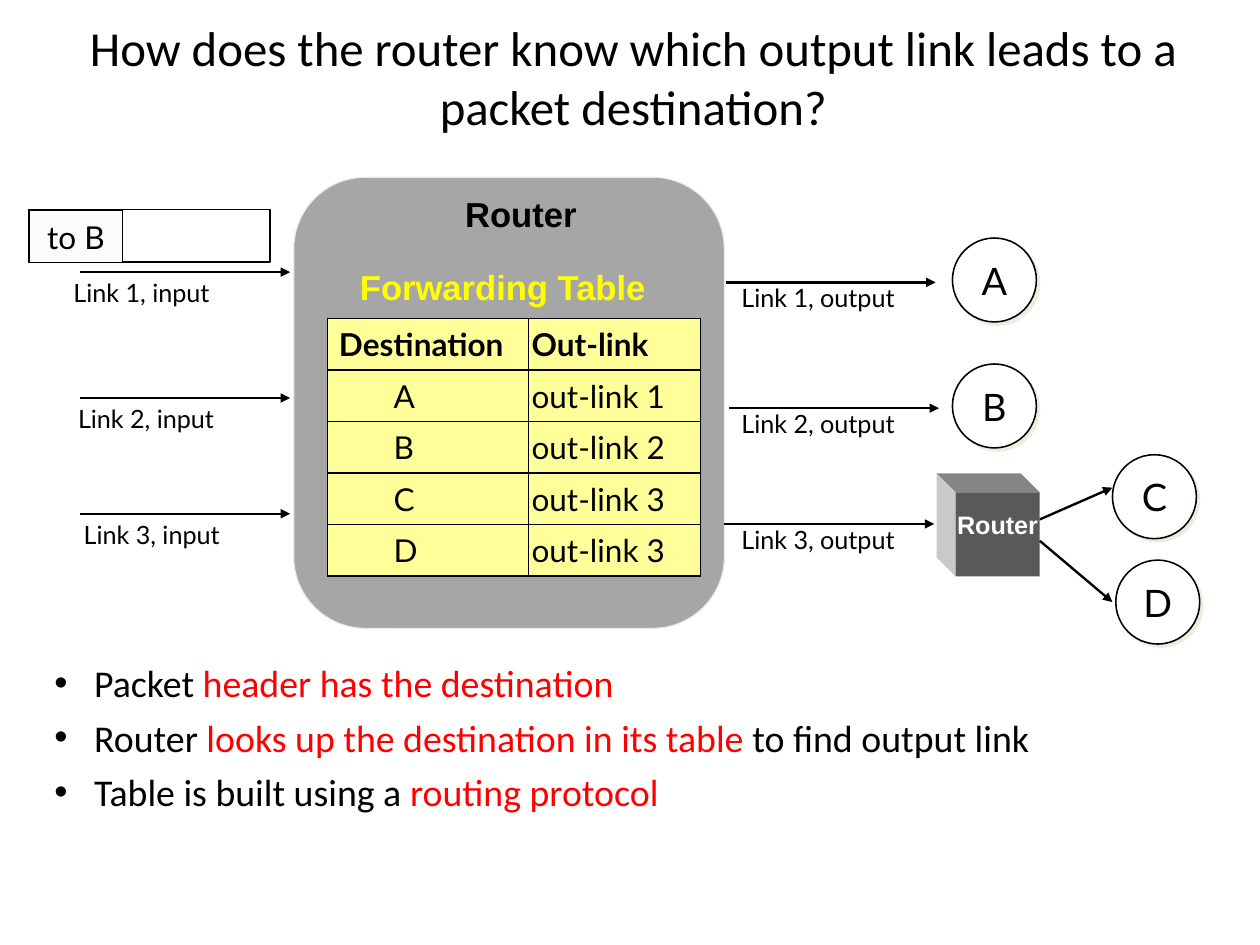
from lxml import etree
from pptx import Presentation
from pptx.dml.color import RGBColor
from pptx.enum import shapes, text
from pptx.oxml import parse_xml
from pptx.oxml.ns import nsdecls, qn
from pptx.util import Pt

BLACK = RGBColor(0, 0, 0)
WHITE = RGBColor(255, 255, 255)
RED = RGBColor(255, 0, 0)
YELLOW = RGBColor(255, 255, 0)
PALE_YELLOW = RGBColor(0xFF, 0xFF, 0x99)
CREAM = RGBColor(0xFC, 0xFB, 0xF9)
BEIGE = RGBColor(0xEE, 0xEC, 0xE1)
GREY = RGBColor(0xA6, 0xA6, 0xA6)
CUBE_FRONT = RGBColor(0x59, 0x59, 0x59)
CUBE_TOP = RGBColor(0x85, 0x85, 0x85)
CUBE_SIDE = RGBColor(0xC9, 0xC9, 0xC9)

TITLE = "How does the router know which output link leads to a packet destination?"
POINTS = [
    [("Packet ", BLACK), ("header has the destination", RED)],
    [("Router ", BLACK), ("looks up the destination in its table ", RED),
     ("to find output link", BLACK)],
    [("Table is built using a ", BLACK), ("routing protocol", RED)],
]
FORWARDING = [
    ("Destination", "Out-link"),
    ("A", "out-link 1"),
    ("B", "out-link 2"),
    ("C", "out-link 3"),
    ("D", "out-link 3"),
]
# link number, arrow height, left of input label, start of output arrow
LINKS = [(1, 172.8, 39.6, 460.8), (2, 252.7, 42.5, 463), (3, 326.2, 46.1, 460)]
INPUT_START, LINK_LENGTH = 51, 133.2
OUTPUT_DROP = 6.5
# name and centre of each destination
NODES = [("A", 631.4, 177.8), ("B", 631.4, 257.8), ("C", 733, 315.4), ("D", 735.1, 382.3)]
NODE_SIZE = 53.3
CUBE_X, CUBE_Y, CUBE_SIZE, CUBE_DEPTH = 606.7, 312.6, 53.4, 12
CUBE_ARROWS = [((660.2, 329.8), (706.3, 309.6)), ((660.2, 343.4), (706.3, 382.3))]
TABLE_X, TABLE_Y, COLUMNS, ROW = 208, 202.3, (127.5, 109.5), 32.7

prs = Presentation()
prs.slide_width, prs.slide_height = Pt(800), Pt(600)
s = prs.slides.add_slide(prs.slide_layouts[6])


def write(tf, paragraphs, size=16, font="Lato", color=BLACK, bold=False,
          align=text.PP_ALIGN.LEFT, anchor=text.MSO_ANCHOR.TOP, wrap=True):
    """Fill a text frame; each paragraph is a string or a list of (text, colour)."""
    tf.word_wrap, tf.vertical_anchor = wrap, anchor
    if isinstance(paragraphs, str):
        paragraphs = [paragraphs]
    for i, runs in enumerate(paragraphs):
        p = tf.paragraphs[0] if i == 0 else tf.add_paragraph()
        p.alignment = align
        for words, tint in [(runs, color)] if isinstance(runs, str) else runs:
            r = p.add_run()
            r.text = words
            r.font.size, r.font.name, r.font.bold = Pt(size), font, bold
            r.font.color.rgb = tint
    return tf


def text_box(x, y, w, h, paragraphs, **fmt):
    return write(s.shapes.add_textbox(Pt(x), Pt(y), Pt(w), Pt(h)).text_frame, paragraphs, **fmt)


def paint(sp, fill, line=None, width=1):
    sp.shadow.inherit = False
    sp.fill.solid()
    sp.fill.fore_color.rgb = fill
    if line is None:
        sp.line.fill.background()
    else:
        sp.line.color.rgb, sp.line.width = line, Pt(width)
    return sp


def shape(kind, x, y, w, h, fill, line=None, width=1):
    return paint(s.shapes.add_shape(kind, Pt(x), Pt(y), Pt(w), Pt(h)), fill, line, width)


def polygon(points, fill):
    corners = [(Pt(x), Pt(y)) for x, y in points]
    builder = s.shapes.build_freeform(*corners[0])
    builder.add_line_segments(corners[1:], close=True)
    paint(builder.convert_to_shape(), fill)


def arrow(start, end):
    c = s.shapes.add_connector(shapes.MSO_CONNECTOR.STRAIGHT, *map(Pt, start + end))
    c.line.color.rgb, c.line.width = BLACK, Pt(1.5)
    etree.SubElement(c.line._get_or_add_ln(), qn("a:tailEnd"), type="triangle")
    etree.SubElement(c._element.spPr, qn("a:effectLst"))


def border(cell):
    for side in ("lnL", "lnR", "lnT", "lnB"):
        cell._tc.get_or_add_tcPr().append(parse_xml(
            f'<a:{side} {nsdecls("a")} w="12700"><a:solidFill>'
            f'<a:srgbClr val="{BLACK}"/></a:solidFill></a:{side}>'))


def node(name, cx, cy):
    sp = shape(shapes.MSO_SHAPE.OVAL, cx - NODE_SIZE / 2, cy - NODE_SIZE / 2,
               NODE_SIZE, NODE_SIZE, WHITE, BLACK)
    sp._element.spPr.find(qn("a:effectLst")).append(parse_xml(
        f'<a:outerShdw {nsdecls("a")} dist="35560" dir="2700000">'
        f'<a:srgbClr val="{BEIGE}"/></a:outerShdw>'))
    write(sp.text_frame, name, size=24, **CENTRED)


def forwarding_table():
    t = s.shapes.add_table(len(FORWARDING), 2, Pt(TABLE_X), Pt(TABLE_Y),
                           Pt(sum(COLUMNS)), Pt(ROW * len(FORWARDING))).table
    t.first_row = t.horz_banding = False
    for column, width in zip(t.columns, COLUMNS):
        column.width = Pt(width)
    for i, row in enumerate(FORWARDING):
        t.rows[i].height = Pt(ROW)
        for j, words in enumerate(row):
            cell = t.cell(i, j)
            border(cell)
            cell.fill.solid()
            cell.fill.fore_color.rgb = PALE_YELLOW
            cell.margin_left = Pt(2 if j else 7.2 if i == 0 else 42)
            cell.margin_right = 0
            cell.vertical_anchor = text.MSO_ANCHOR.MIDDLE
            write(cell.text_frame, words, size=20, bold=i == 0)


CENTRED = dict(align=text.PP_ALIGN.CENTER, anchor=text.MSO_ANCHOR.MIDDLE, wrap=False)
HEADING = dict(size=22, font="Arial", bold=True, align=text.PP_ALIGN.CENTER)

text_box(18, -1.5, 768, 100, TITLE, size=31, font="Calibri",
         align=text.PP_ALIGN.CENTER, anchor=text.MSO_ANCHOR.MIDDLE)

shape(shapes.MSO_SHAPE.ROUNDED_RECTANGLE, 186.5, 112.5, 273.5, 286.5, GREY, BEIGE, 0.75)
text_box(213, 118.8, 235.5, 34.5, "Router", **HEADING)
text_box(201.5, 165, 235.5, 34.5, "Forwarding Table", color=YELLOW, **HEADING)
forwarding_table()

for number, y, label_x, output_x in LINKS:
    arrow((INPUT_START, y), (INPUT_START + LINK_LENGTH, y))
    arrow((output_x, y + OUTPUT_DROP), (output_x + LINK_LENGTH, y + OUTPUT_DROP))
    text_box(label_x, y, 102, 26.6, f"Link {number}, input", wrap=False)
    text_box(463.7, y + 2.9, 114, 26.6, f"Link {number}, output", wrap=False)

shape(shapes.MSO_SHAPE.RECTANGLE, 18, 133, 153.5, 33.3, WHITE, BLACK)
header = shape(shapes.MSO_SHAPE.RECTANGLE, 18.7, 133.5, 59, 33.3, CREAM, BLACK)
write(header.text_frame, "to B", size=20, **CENTRED)

left, top = CUBE_X - CUBE_DEPTH, CUBE_Y - CUBE_DEPTH
right, bottom = CUBE_X + CUBE_SIZE, CUBE_Y + CUBE_SIZE
polygon([(left, top), (right - CUBE_DEPTH, top), (right, CUBE_Y), (CUBE_X, CUBE_Y)], CUBE_TOP)
polygon([(left, top), (CUBE_X, CUBE_Y), (CUBE_X, bottom), (left, bottom - CUBE_DEPTH)], CUBE_SIDE)
front = shape(shapes.MSO_SHAPE.RECTANGLE, CUBE_X, CUBE_Y, CUBE_SIZE, CUBE_SIZE, CUBE_FRONT)
tf = write(front.text_frame, "Router", font="Arial", bold=True, color=WHITE, **CENTRED)
tf.margin_left = tf.margin_right = 0
tf.margin_bottom = Pt(16)

for name, cx, cy in NODES:
    node(name, cx, cy)
for start, end in CUBE_ARROWS:
    arrow(start, end)

tf = text_box(26.6, 421.2, 760, 186 - 10, POINTS, size=24, font="Calibri")
tf.margin_left = tf.margin_right = Pt(8)
for p in tf.paragraphs:
    p.line_spacing, p.space_before, p.space_after = 0.8, Pt(4.8), Pt(6.7)
    pPr = p._p.get_or_add_pPr()
    pPr.set("marL", str(Pt(25.2)))
    pPr.set("indent", str(-Pt(25.2)))
    etree.SubElement(pPr, qn("a:buFont"), typeface="Arial")
    etree.SubElement(pPr, qn("a:buChar"), char="•")

prs.save("out.pptx")
